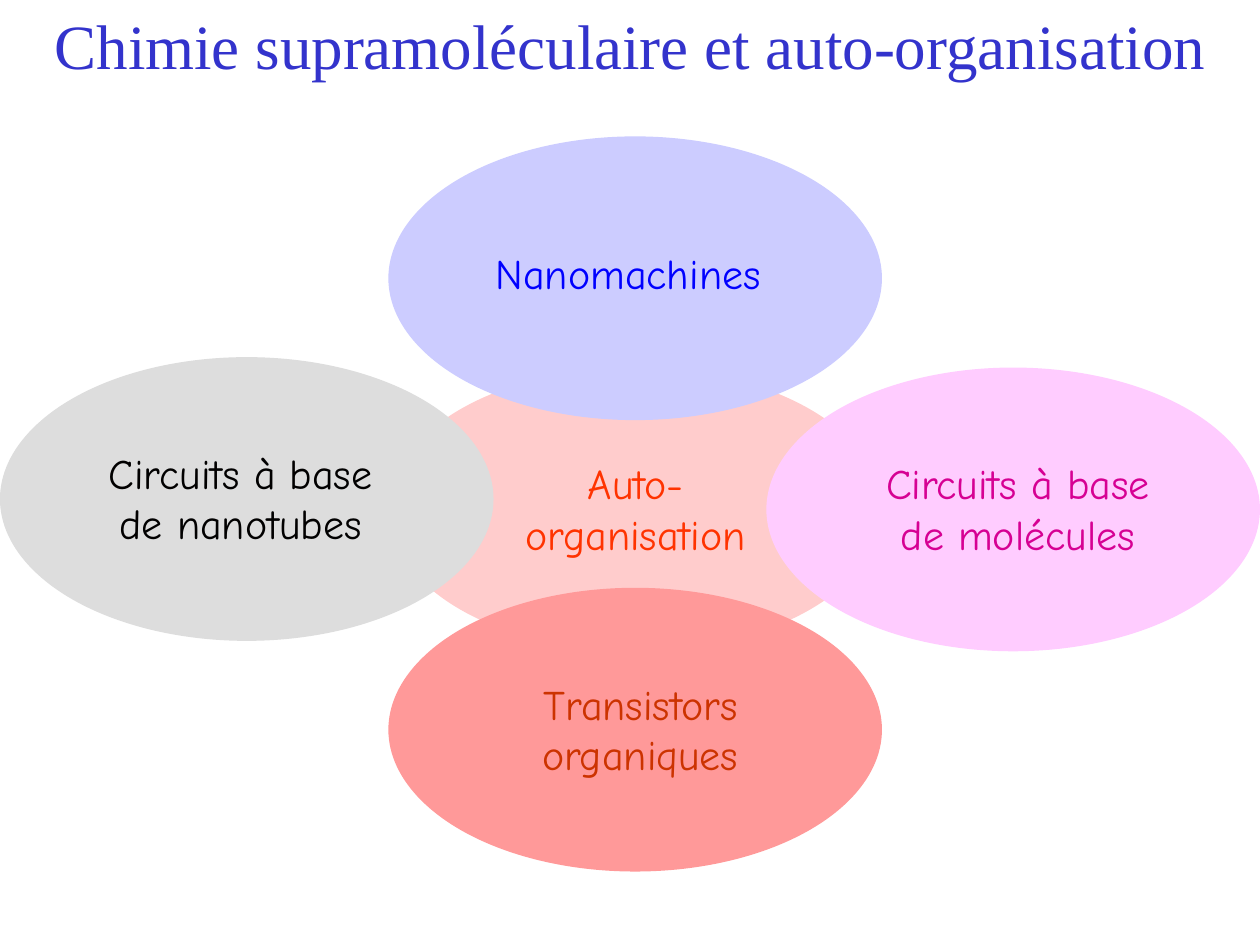
from pptx import Presentation
from pptx import util as u
from pptx.dml.color import RGBColor
from pptx.enum import shapes, text

Cm = u.Cm


def paint(color_format, hex_colour):
    color_format.rgb = RGBColor.from_string(hex_colour)


def write(frame, lines, align, size, font, colour):
    settings = {"vertical_anchor": text.MSO_ANCHOR.TOP,
                "margin_left": Cm(0.25), "margin_right": Cm(0.25),
                "margin_top": Cm(0.13), "margin_bottom": Cm(0.13)}
    for key, value in settings.items():
        setattr(frame, key, value)
    frame.text = "\n".join(lines)
    for paragraph in frame.paragraphs:
        paragraph.alignment = align
        for key, value in {"size": u.Pt(size), "name": font}.items():
            setattr(paragraph.font, key, value)
        paint(paragraph.font.color, colour)


deck = Presentation()
deck.slide_width, deck.slide_height = Cm(25.4), Cm(19.05)
slide = deck.slides.add_slide(deck.slide_layouts[5])
LEFT, CENTER = text.PP_ALIGN.LEFT, text.PP_ALIGN.CENTER

# Title
title = slide.shapes.title
title.left, title.top, title.width, title.height = Cm(0.85), Cm(0), Cm(24.33), Cm(1.78)
write(title.text_frame, ["Chimie supramoléculaire et auto-organisation"],
      LEFT, 36, "Times New Roman", "3333CC")
title.text_frame.auto_size = text.MSO_AUTO_SIZE.NONE

# Themes, back to front: ellipse corner and fill, label box, alignment, colour, lines
themes = [
    ((7.83, 7.41), "FFCCCC", (10.16, 9.1, 5.31, 2.29), CENTER, "FF3300",
     ["Auto-", "organisation"]),
    ((15.45, 7.41), "FFCCFF", (17.36, 9.1, 6.32, 2.29), CENTER, "D60093",
     ["Circuits à base", "de molécules"]),
    ((7.83, 2.75), "CCCCFF", (9.74, 4.87, 6.07, 1.27), LEFT, "0000FF",
     ["Nanomachines"]),
    ((0, 7.2), "DDDDDD", (1.69, 8.89, 6.32, 2.29), CENTER, "010000",
     ["Circuits à base", "de nanotubes"]),
    ((7.83, 11.85), "FF9999", (10.37, 13.55, 5.08, 2.29), CENTER, "CC3300",
     ["Transistors", "organiques"]),
]
for corner, fill, label_box, align, colour, lines in themes:
    ellipse = slide.shapes.add_shape(
        shapes.MSO_SHAPE.OVAL, *map(Cm, corner), Cm(9.95), Cm(5.72))
    ellipse.shadow.inherit = False
    ellipse.fill.solid()
    paint(ellipse.fill.fore_color, fill)
    ellipse.line.fill.background()

    label = slide.shapes.add_textbox(*map(Cm, label_box)).text_frame
    label.word_wrap = False
    write(label, lines, align, 24, "Comic Neue", colour)

deck.save("out.pptx")
